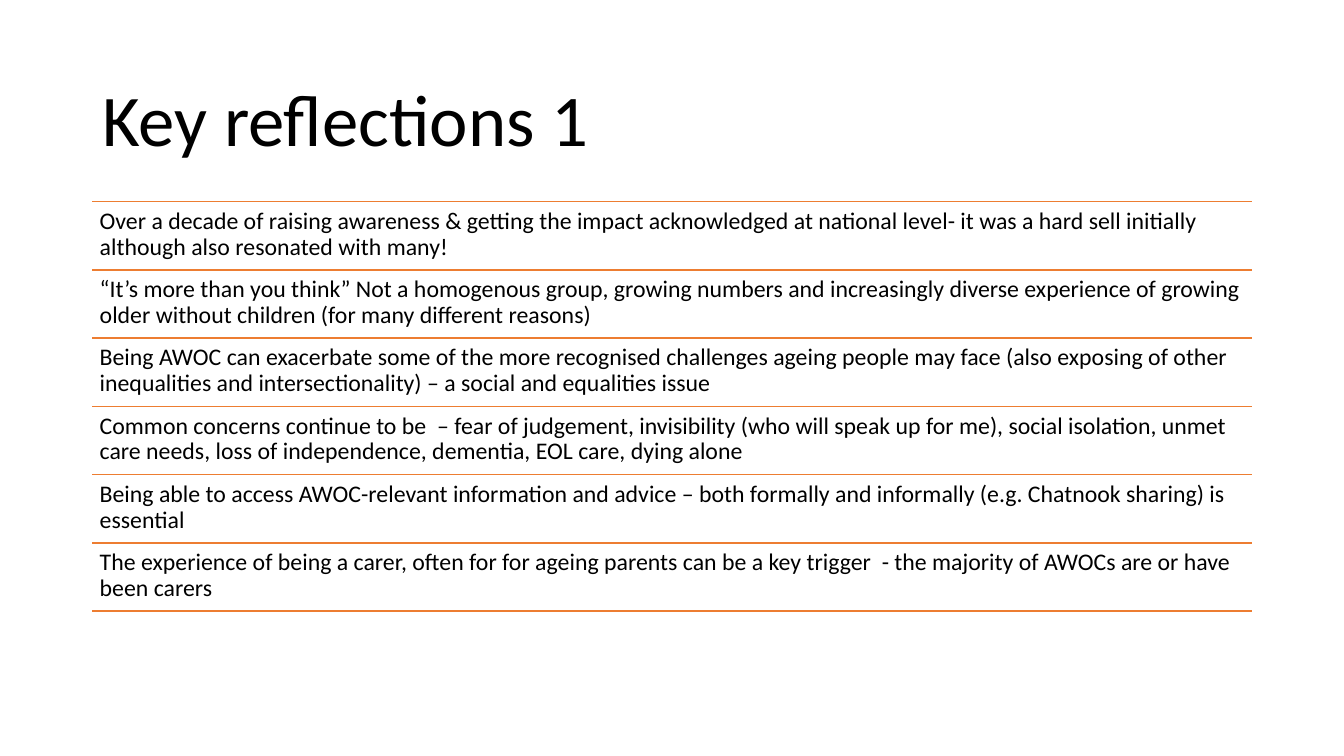
import pptx
import pptx.dml.color
import pptx.enum.shapes
import pptx.enum.text
import pptx.oxml.ns
import pptx.util
from dataclasses import dataclass
from lxml import etree

REFLECTIONS = [
    "Over a decade of raising awareness & getting the impact acknowledged at national level- "
    "it was a hard sell initially although also resonated with many!",
    "“It’s more than you think” Not a homogenous group, growing numbers and increasingly "
    "diverse experience of growing older without children (for many different reasons)",
    "Being AWOC can exacerbate some of the more recognised challenges ageing people may face "
    "(also exposing of other inequalities and intersectionality) – a social and equalities issue",
    "Common concerns continue to be  – fear of judgement, invisibility (who will speak up for me), "
    "social isolation, unmet care needs, loss of independence, dementia, EOL care, dying alone",
    "Being able to access AWOC-relevant information and advice – both formally and informally "
    "(e.g. Chatnook sharing) is essential",
    "The experience of being a carer, often for for ageing parents can be a key trigger  - "
    "the majority of AWOCs are or have been carers",
]


@dataclass(frozen=True)
class Theme:
    """Colours, font and type sizes of the slide."""
    font: str = "Calibri"
    ink: str = "000000"
    rule: str = "ED7D31"
    title_size: int = 52
    body_size: int = 17
    rule_width: int = 1


def px(length):
    """Turn whole px, 96 to the inch, into EMU."""
    return pptx.util.Emu(length * 9525)


def write_text(frame, text, *, font, size, color, anchor, inset=None, space_after=0):
    """Fill a text frame with one formatted, left-aligned paragraph."""
    frame.word_wrap = True
    frame.auto_size = pptx.enum.text.MSO_AUTO_SIZE.NONE
    frame.vertical_anchor = anchor
    if inset is not None:
        frame.margin_left = frame.margin_right = px(inset)
        frame.margin_top = frame.margin_bottom = px(inset)
    paragraph = frame.paragraphs[0]
    paragraph.alignment = pptx.enum.text.PP_ALIGN.LEFT
    paragraph.line_spacing = 0.9
    paragraph.space_after = pptx.util.Pt(space_after)
    run = paragraph.add_run()
    run.text = text
    run.font.name = font
    run.font.size = pptx.util.Pt(size)
    run.font.color.rgb = pptx.dml.color.RGBColor.from_string(color)


class SlideBuilder:
    """Hold the theme and the current slide, and add its elements."""

    def __init__(self, slide, theme):
        """Keep the slide and its theme."""
        self.slide = slide
        self.theme = theme

    def title(self, text, left, top, width, height):
        """Place and format the title placeholder."""
        heading = self.slide.shapes.title
        heading.left, heading.top = px(left), px(top)
        heading.width, heading.height = px(width), px(height)
        write_text(heading.text_frame, text, font=self.theme.font,
                   size=self.theme.title_size, color=self.theme.ink,
                   anchor=pptx.enum.text.MSO_ANCHOR.MIDDLE)

    def rule(self, left, top, width):
        """Draw a horizontal dividing line."""
        divider = self.slide.shapes.add_connector(
            pptx.enum.shapes.MSO_CONNECTOR.STRAIGHT,
            px(left), px(top), px(left + width), px(top))
        divider.line.color.rgb = pptx.dml.color.RGBColor.from_string(self.theme.rule)
        divider.line.width = pptx.util.Pt(self.theme.rule_width)
        etree.SubElement(divider._element.spPr, pptx.oxml.ns.qn("a:effectLst"))

    def reflection(self, text, left, top, width, height):
        """Add the text of one reflection."""
        statement = self.slide.shapes.add_textbox(px(left), px(top), px(width), px(height))
        write_text(statement.text_frame, text, font=self.theme.font,
                   size=self.theme.body_size, color=self.theme.ink,
                   anchor=pptx.enum.text.MSO_ANCHOR.TOP, inset=7, space_after=6)


def main():
    """Build and save the slide."""
    deck = pptx.Presentation()
    deck.slide_width, deck.slide_height = px(1280), px(720)
    builder = SlideBuilder(deck.slides.add_slide(deck.slide_layouts[5]), Theme())
    left, width, list_top, row_height = 88, 1104, 192, 65
    builder.title("Key reflections 1", left, 58, width, 119)
    for row, text in enumerate(REFLECTIONS):
        row_top = list_top + row * row_height
        builder.rule(left, row_top, width)
        builder.reflection(text, left, row_top, width, row_height)
    builder.rule(left, list_top + len(REFLECTIONS) * row_height, width)
    deck.save("out.pptx")


if __name__ == "__main__":
    main()
